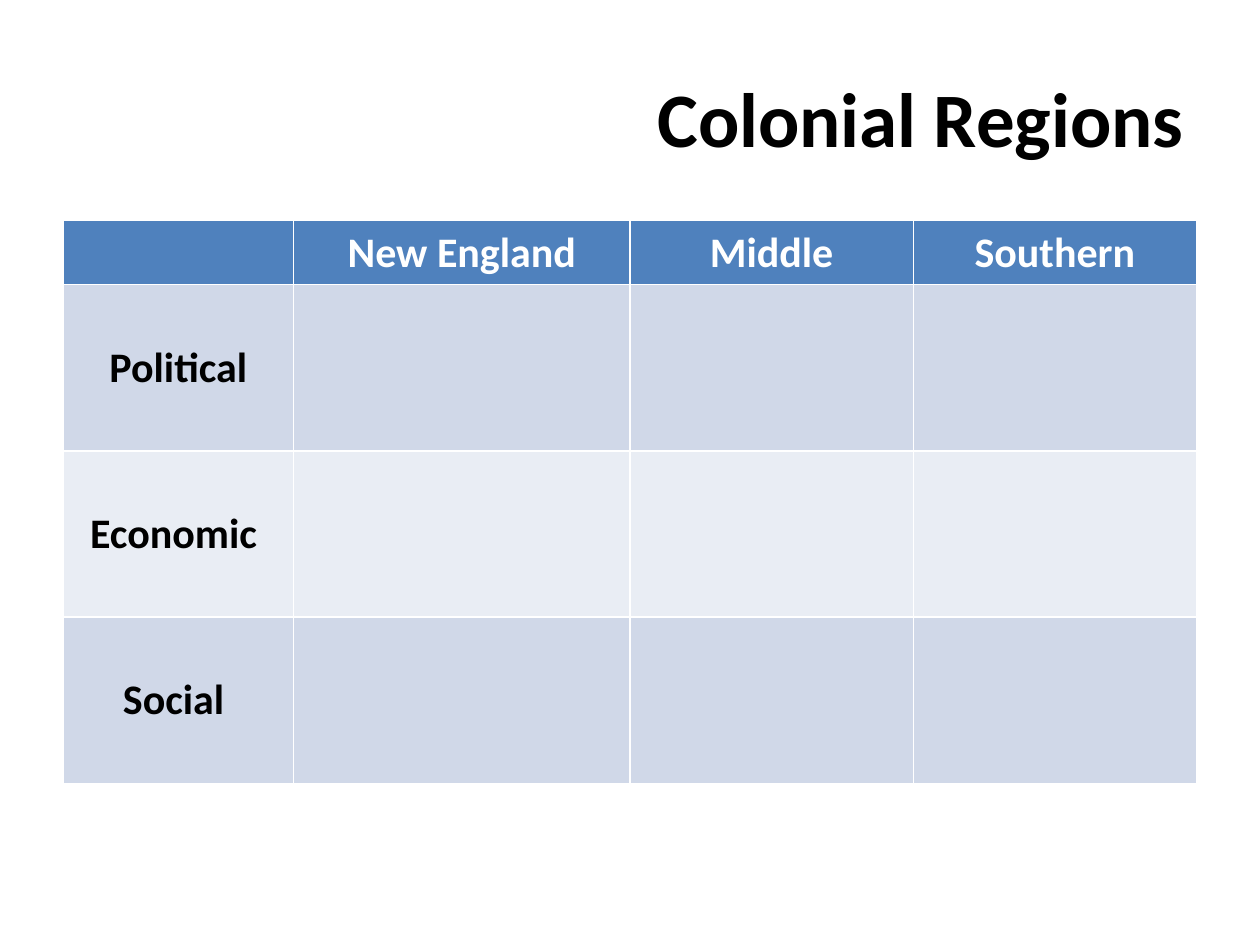
from pptx import Presentation
from pptx.dml.color import RGBColor as Rgb
from pptx.enum.text import MSO_ANCHOR as Anchor, PP_ALIGN as Align
from pptx.util import Cm, Pt

TITLE = "Colonial Regions"
HEADS = ["", "New England", "Middle", "Southern"]
THEMES = ["Political", "Economic ", "Social "]
WIDTHS = [4.65, 6.78, 5.71, 5.71]
HEAD_H, BODY_H = 1.29, 3.35
LEFT, WIDE = 1.27, 22.86
COLORS = {"ink": "000000", "white": "FFFFFF", "head": "4F81BD",
          "odd": "D0D8E8", "even": "E9EDF4"}


def color(name):
    return Rgb.from_string(COLORS[name])


def write(frame, text, size, ink, align):
    frame.text = text
    para = frame.paragraphs[0]
    para.alignment = align
    for run in para.runs:
        font = run.font
        font.name, font.size, font.bold = "Calibri", Pt(size), True
        font.color.rgb = color(ink)


deck = Presentation()
deck.slide_width, deck.slide_height = Cm(25.4), Cm(19.05)
slide = deck.slides.add_slide(deck.slide_layouts[6])

title = slide.shapes.add_textbox(Cm(LEFT), Cm(0.76), Cm(WIDE), Cm(3.18))
frame = title.text_frame
frame.word_wrap = True
frame.vertical_anchor = Anchor.MIDDLE
write(frame, TITLE, 44, "ink", Align.RIGHT)

rows = [HEADS] + [[theme] + [""] * (len(HEADS) - 1) for theme in THEMES]
high = HEAD_H + BODY_H * len(THEMES)
table = slide.shapes.add_table(len(rows), len(HEADS), Cm(LEFT), Cm(4.45),
                               Cm(WIDE), Cm(high)).table
for col, width in zip(table.columns, WIDTHS):
    col.width = Cm(width)
for r, row in enumerate(rows):
    table.rows[r].height = Cm(BODY_H if r else HEAD_H)
    fill = ("odd" if r % 2 else "even") if r else "head"
    for c, text in enumerate(row):
        cell = table.cell(r, c)
        cell.fill.solid()
        cell.fill.fore_color.rgb = color(fill)
        cell.vertical_anchor = Anchor.MIDDLE
        write(cell.text_frame, text, 24, "ink" if r else "white", Align.CENTER)

deck.save("out.pptx")
